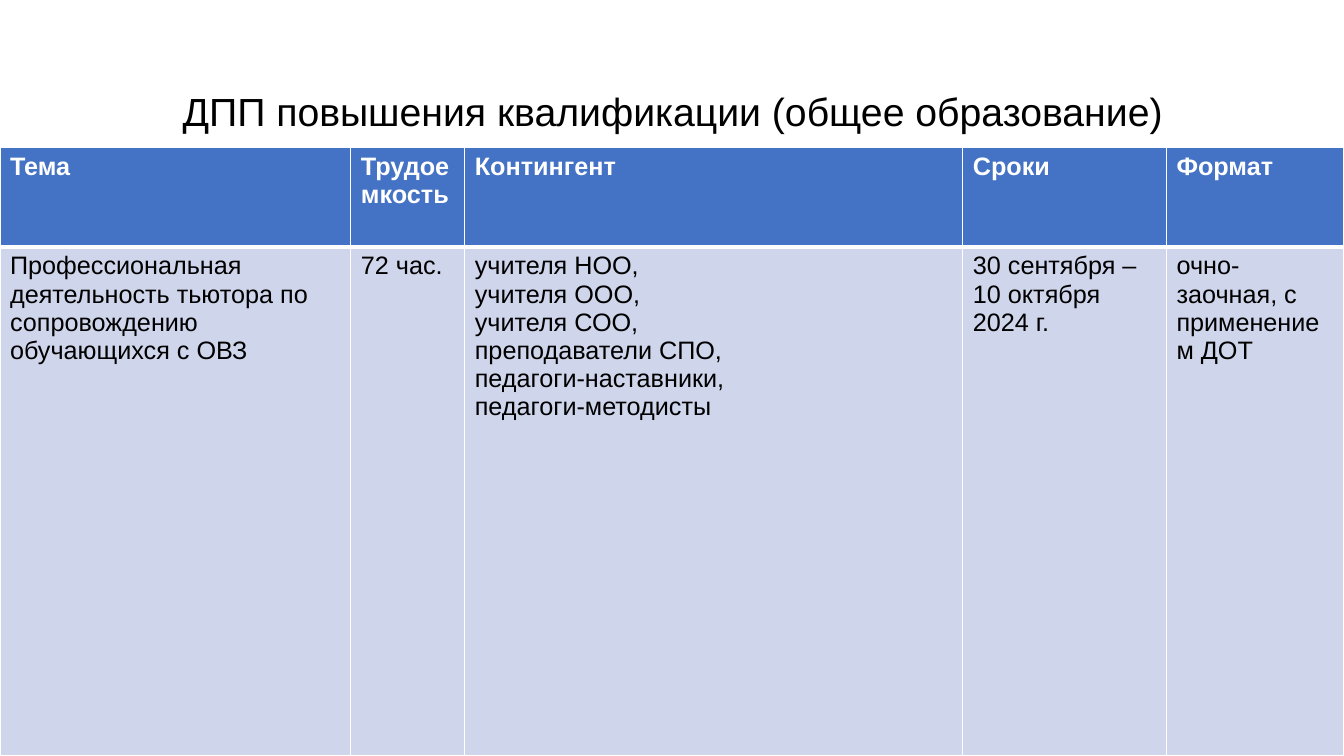
from dataclasses import dataclass

import lxml.etree
import pptx
import pptx.dml.color
import pptx.enum.text
import pptx.oxml.ns
import pptx.util
from pptx.util import Inches


@dataclass(frozen=True)
class Theme:
    """Colours, font and sizes of the slide."""
    font: str = "Arial"
    title_size: int = 28
    cell_size: int = 18
    text: str = "000000"
    light: str = "FFFFFF"
    header_fill: str = "4472C4"
    body_fill: str = "CFD5EA"
    thin: int = 1
    thick: int = 3


THEME = Theme()
TITLE = "ДПП повышения квалификации (общее образование)"
COLUMN_WIDTHS = [3.48, 1.13, 4.94, 2.02, 1.76]
ROW_HEIGHTS = [0.99, 5.05]
HEADERS = ["Тема", "Трудоемкость", "Контингент", "Сроки", "Формат"]
PROGRAMME = [
    "Профессиональная деятельность тьютора по сопровождению обучающихся с ОВЗ",
    "72 час.",
    "учителя НОО,\nучителя ООО,\nучителя СОО,\nпреподаватели СПО,\n"
    "педагоги-наставники,\nпедагоги-методисты",
    "30 сентября –\n10 октября 2024 г.",
    "очно-заочная, с применением ДОТ",
]


def rgb(colour):
    """Return an RGB colour from its hex form."""
    return pptx.dml.color.RGBColor.from_string(colour)


def add_run(p, text, size, colour, bold=False):
    """Add one formatted run to a paragraph."""
    r = p.add_run()
    r.text = text
    r.font.name = THEME.font
    r.font.size = pptx.util.Pt(size)
    r.font.bold = bold
    r.font.color.rgb = rgb(colour)


def add_title(s, text):
    """Add the centred slide title."""
    sp = s.shapes.add_textbox(Inches(0.92), Inches(0.4), Inches(11.5), Inches(1.45))
    tf = sp.text_frame
    tf.word_wrap = True
    tf.vertical_anchor = pptx.enum.text.MSO_ANCHOR.MIDDLE
    p = tf.paragraphs[0]
    p.alignment = pptx.enum.text.PP_ALIGN.CENTER
    p.line_spacing = 0.9
    add_run(p, text, THEME.title_size, THEME.text)


def set_borders(cell, top, bottom):
    """Draw white cell borders with the given top and bottom widths."""
    qn = pptx.oxml.ns.qn
    widths = {"a:lnL": THEME.thin, "a:lnR": THEME.thin, "a:lnT": top, "a:lnB": bottom}
    tc_pr = cell._tc.get_or_add_tcPr()
    for i, (tag, width) in enumerate(widths.items()):
        ln = lxml.etree.Element(qn(tag), w=str(pptx.util.Pt(width)))
        fill = lxml.etree.SubElement(ln, qn("a:solidFill"))
        lxml.etree.SubElement(fill, qn("a:srgbClr"), val=THEME.light)
        tc_pr.insert(i, ln)


def fill_cell(cell, text, is_header):
    """Write the lines of a cell and colour it."""
    cell.fill.solid()
    cell.fill.fore_color.rgb = rgb(THEME.header_fill if is_header else THEME.body_fill)
    colour = THEME.light if is_header else THEME.text
    tf = cell.text_frame
    for i, line in enumerate(text.split("\n")):
        p = tf.add_paragraph() if i else tf.paragraphs[0]
        add_run(p, line, THEME.cell_size, colour, is_header)
    if is_header:
        set_borders(cell, THEME.thin, THEME.thick)
    else:
        set_borders(cell, THEME.thick, THEME.thin)


def add_programme_table(s, rows):
    """Add the table of training programmes."""
    table = s.shapes.add_table(
        len(rows), len(COLUMN_WIDTHS), Inches(0), Inches(1.46),
        Inches(sum(COLUMN_WIDTHS)), Inches(sum(ROW_HEIGHTS))).table
    for column, width in zip(table.columns, COLUMN_WIDTHS):
        column.width = Inches(width)
    for i, (row, height) in enumerate(zip(table.rows, ROW_HEIGHTS)):
        row.height = Inches(height)
        for cell, text in zip(row.cells, rows[i]):
            fill_cell(cell, text, i == 0)


def main():
    """Build the slide and save it."""
    prs = pptx.Presentation()
    prs.slide_width, prs.slide_height = Inches(13.33), Inches(7.5)
    s = prs.slides.add_slide(prs.slide_layouts[6])
    add_title(s, TITLE)
    add_programme_table(s, [HEADERS, PROGRAMME])
    prs.save("out.pptx")


if __name__ == "__main__":
    main()
